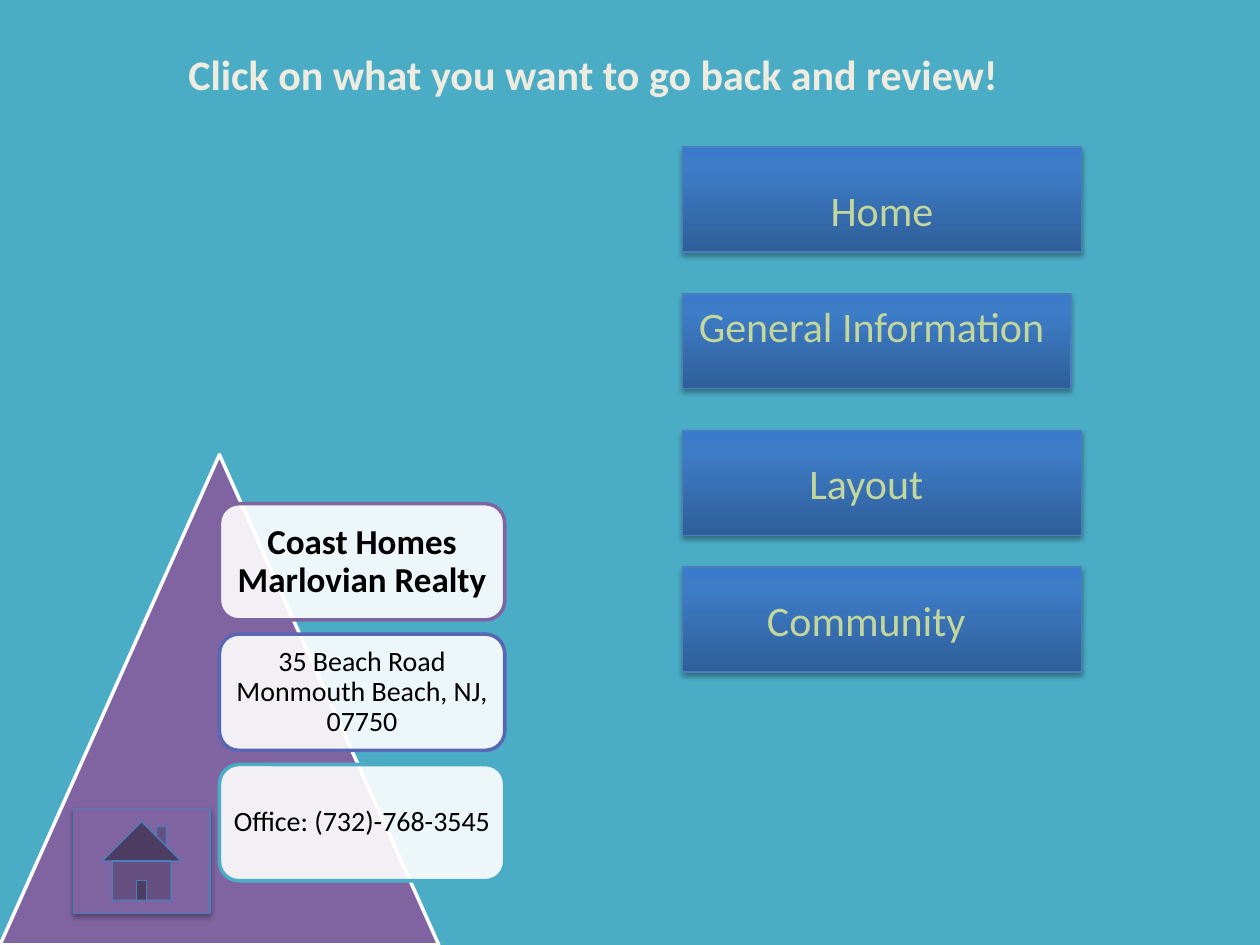
from dataclasses import dataclass

from lxml import etree
from pptx import Presentation
from pptx.dml.color import RGBColor
from pptx.enum.shapes import MSO_SHAPE
from pptx.enum.text import MSO_ANCHOR, MSO_AUTO_SIZE, PP_ALIGN
from pptx.oxml.ns import qn
from pptx.util import Inches, Pt

TRIANGLE, ROUNDED, RECT = MSO_SHAPE.ISOSCELES_TRIANGLE, MSO_SHAPE.ROUNDED_RECTANGLE, MSO_SHAPE.RECTANGLE
HOME_BUTTON = MSO_SHAPE.ACTION_BUTTON_HOME
TOP, MIDDLE = MSO_ANCHOR.TOP, MSO_ANCHOR.MIDDLE
CENTER = PP_ALIGN.CENTER
GROW, FIXED = MSO_AUTO_SIZE.SHAPE_TO_FIT_TEXT, MSO_AUTO_SIZE.NONE
COLUMNS, ROWS = 120, 90


@dataclass(frozen=True)
class Theme:
    """Colours, font and type sizes of the slide."""
    font: str = "Calibri"
    background: str = "4BACC6"
    purple: str = "8064A2"
    indigo: str = "5767B4"
    white: str = "FFFFFF"
    black: str = "000000"
    cream: str = "EEECE1"
    label: str = "C3D69B"
    edge: str = "4B7EBC"
    gradient: tuple = ((0, "2F5F99"), (80, "3D7CC7"), (100, "3A7CCB"))
    large: int = 24
    medium: int = 20
    small: int = 16


THEME = Theme()


def rgb(value):
    """Turn a hex string into a colour."""
    return RGBColor.from_string(value)


def place(box):
    """Turn a box in columns and rows into slide lengths."""
    x, y, w, h = box
    return (Inches(x * 10 / COLUMNS), Inches(y * 7.5 / ROWS),
            Inches(w * 10 / COLUMNS), Inches(h * 7.5 / ROWS))


def add_color(parent, value, alpha=None):
    """Append a colour element, optionally translucent, to an XML parent."""
    color = etree.SubElement(parent, qn("a:srgbClr"), val=value)
    if alpha is not None:
        etree.SubElement(color, qn("a:alpha"), val=str(alpha * 1000))


def add_figure(s, kind, box, fill, line, width, alpha=None, shadow=False):
    """Draw a preset shape with a plain or graded fill."""
    sp = s.shapes.add_shape(kind, *place(box))
    sp.shadow.inherit = False
    sp.line.color.rgb = rgb(line)
    sp.line.width = Pt(width)
    props = sp._element.spPr
    if isinstance(fill, tuple):
        sp.fill.gradient()
        sp.fill.gradient_angle = 90
        stops = props.find(".//" + qn("a:gsLst"))
        for stop in list(stops):
            stops.remove(stop)
        for position, value in fill:
            add_color(etree.SubElement(stops, qn("a:gs"), pos=str(position * 1000)), value)
    else:
        sp.fill.solid()
        sp.fill.fore_color.rgb = rgb(fill)
        if alpha is not None:
            color = props.find(qn("a:solidFill"))[0]
            etree.SubElement(color, qn("a:alpha"), val=str(alpha * 1000))
    if shadow:
        outer = etree.SubElement(props.find(qn("a:effectLst")), qn("a:outerShdw"),
                                 blurRad=str(Pt(3.1)), dist=str(Pt(1.8)),
                                 dir="5400000", rotWithShape="0")
        add_color(outer, THEME.black, 35)
    return sp


def write(sp, text, *, size, color, bold=False, anchor=TOP, fit=GROW, inset=None, spacing=None):
    """Fill a shape with centred, formatted text."""
    tf = sp.text_frame
    tf.word_wrap = True
    tf.auto_size = fit
    tf.vertical_anchor = anchor
    if inset is not None:
        tf.margin_left = tf.margin_right = tf.margin_top = tf.margin_bottom = Inches(inset)
    p = tf.paragraphs[0]
    p.text = text
    p.alignment = CENTER
    if spacing:
        p.line_spacing = spacing
    for r in p.runs:
        r.font.name = THEME.font
        r.font.size = Pt(size)
        r.font.bold = bold
        r.font.color.rgb = rgb(color)


def add_title(s, box, text):
    """Place the heading in the title placeholder."""
    sp = s.shapes.title
    sp.left, sp.top, sp.width, sp.height = place(box)
    write(sp, text, size=THEME.large, color=THEME.cream, bold=True)


def add_contact(s, box):
    """Draw the triangle with the stack of contact cards."""
    x, y, w, h = box
    add_figure(s, TRIANGLE, box, THEME.purple, THEME.white, 2)
    cards = (
        ("Coast Homes Marlovian Realty", THEME.purple, THEME.medium, True, 0.08),
        ("35 Beach Road\nMonmouth Beach, NJ, 07750", THEME.indigo, THEME.small, False, 0.07),
        ("Office: (732)-768-3545", THEME.background, THEME.small, False, 0.07),
    )
    left, width, height, pad = x + w / 2, w * 0.65, h * 0.237, 0.54
    for i, (text, line, size, bold, inset) in enumerate(cards):
        top = y + h * (0.1 + 0.266 * i)
        add_figure(s, ROUNDED, (left, top, width, height), THEME.white, line, 2, alpha=90)
        inner = (left + pad, top + pad, width - 2 * pad, height - 2 * pad)
        write(s.shapes.add_textbox(*place(inner)), text, size=size, color=THEME.black,
              bold=bold, anchor=MIDDLE, fit=FIXED, inset=inset, spacing=0.9)


def add_home_button(s, box):
    """Draw the action button that shows a house."""
    add_figure(s, HOME_BUTTON, box, THEME.purple, THEME.edge, 0.75, shadow=True)


def add_menu(s, box):
    """Draw the menu buttons and their labels down the given box."""
    x, y, w, h = box
    items = (
        ("Home", 0, w, 10, (4, 3, 30)),
        ("General Information", 14, w - 1, 9, (-1, 0, 38)),
        ("Layout", 27, w, 10, (4, 2, 27)),
        ("Community", h - 10, w, 10, (3, 2, 29)),
    )
    for text, row, width, height, (dx, dy, label_width) in items:
        add_figure(s, RECT, (x, y + row, width, height), THEME.gradient, THEME.edge, 0.75,
                   shadow=True)
        label = s.shapes.add_textbox(*place((x + dx, y + row + dy, label_width, 6)))
        write(label, text, size=THEME.large, color=THEME.label)


def main():
    """Build and save the slide."""
    prs = Presentation()
    prs.slide_width, prs.slide_height = Inches(10), Inches(7.5)
    s = prs.slides.add_slide(prs.slide_layouts[5])
    s.background.fill.solid()
    s.background.fill.fore_color.rgb = rgb(THEME.background)
    add_contact(s, (0, 43.3, 41.8, 46.7))
    add_home_button(s, (7, 77, 13, 10))
    add_title(s, (8, 4, 97, 6), "Click on what you want to go back and review!")
    add_menu(s, (65, 14, 38, 50))
    prs.save("out.pptx")


if __name__ == "__main__":
    main()
